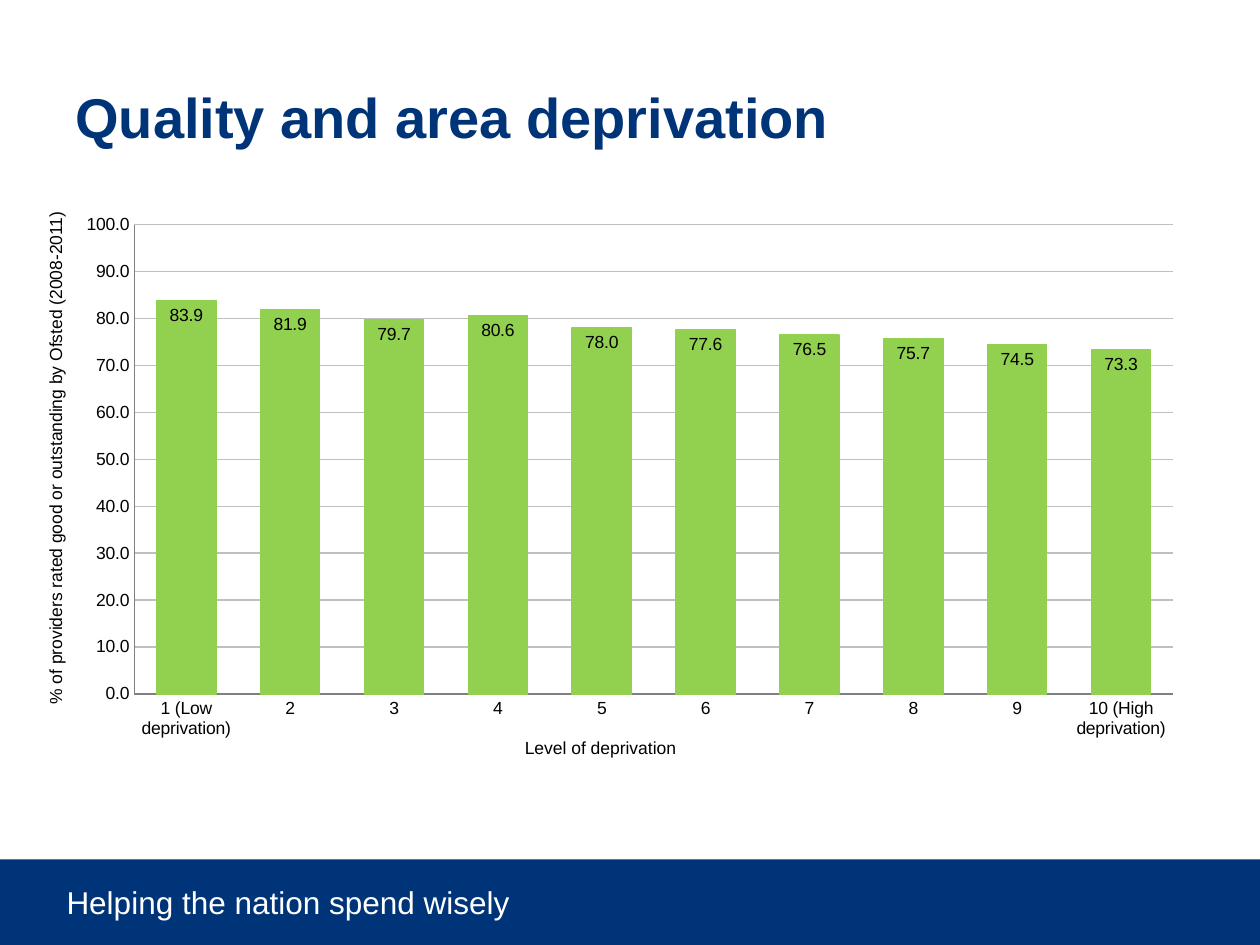
from dataclasses import dataclass

from lxml.etree import SubElement
from pptx import Presentation
from pptx.chart.data import CategoryChartData
from pptx.dml.color import RGBColor
from pptx.enum.chart import XL_CHART_TYPE, XL_LABEL_POSITION, XL_TICK_MARK
from pptx.enum.shapes import MSO_SHAPE
from pptx.enum.text import MSO_ANCHOR, PP_ALIGN
from pptx.oxml.ns import qn
from pptx.util import Inches, Pt


@dataclass(frozen=True)
class Theme:
    font: str = "Arial"
    navy: RGBColor = RGBColor(0x00, 0x34, 0x78)
    green: RGBColor = RGBColor(0x92, 0xD0, 0x50)
    grid: RGBColor = RGBColor(0xBF, 0xBF, 0xBF)
    axis: RGBColor = RGBColor(0x80, 0x80, 0x80)
    black: RGBColor = RGBColor(0, 0, 0)
    white: RGBColor = RGBColor(0xFF, 0xFF, 0xFF)
    title: Pt = Pt(32)
    foot: Pt = Pt(18)
    small: Pt = Pt(10)
    line: Pt = Pt(0.75)


THEME = Theme()
RATES = {
    "1 (Low deprivation)": 83.9, "2": 81.9, "3": 79.7, "4": 80.6, "5": 78.0,
    "6": 77.6, "7": 76.5, "8": 75.7, "9": 74.5, "10 (High deprivation)": 73.3,
}


def style(font, size, color, bold=False):
    font.name, font.size, font.bold = THEME.font, size, bold
    font.color.rgb = color


def add_text(slide, box, text, size, color, bold=False,
             align=PP_ALIGN.LEFT, anchor=MSO_ANCHOR.TOP):
    shape = slide.shapes.add_textbox(*map(Inches, box))
    frame = shape.text_frame
    frame.word_wrap = True
    frame.vertical_anchor = anchor
    para = frame.paragraphs[0]
    para.text = text
    para.alignment = align
    style(para.font, size, color, bold)
    return shape


def add_title(slide, box):
    add_text(slide, box, "Quality and area deprivation", THEME.title,
             THEME.navy, bold=True, anchor=MSO_ANCHOR.MIDDLE)


def add_footer(slide, box):
    left, top, width, height = box
    band = slide.shapes.add_shape(MSO_SHAPE.RECTANGLE, *map(Inches, box))
    band.shadow.inherit = False
    band.fill.solid()
    band.fill.fore_color.rgb = THEME.navy
    band.line.fill.background()
    add_text(slide, (left + 0.43, top + 0.14, 7.8, 0.4),
             "Helping the nation spend wisely", THEME.foot, THEME.white)


def set_plot(chart, **parts):
    """Fix the inner plot area as fractions of the chart."""
    area = chart.plots[0]._element.getparent()
    layout = area.find(qn("c:layout"))
    if layout is None:
        layout = SubElement(area, qn("c:layout"))
        area.insert(0, layout)
    manual = SubElement(layout, qn("c:manualLayout"))
    values = {"layoutTarget": "inner", "xMode": "edge", "yMode": "edge", **parts}
    for name, value in values.items():
        SubElement(manual, qn(f"c:{name}")).set("val", str(value))


def add_chart(slide, box):
    left, top, width, height = box
    data = CategoryChartData(number_format="0.0")
    data.categories = list(RATES)
    data.add_series("Series 1", list(RATES.values()))
    chart = slide.shapes.add_chart(
        XL_CHART_TYPE.COLUMN_CLUSTERED, *map(Inches, box), data).chart
    style(chart.font, THEME.small, THEME.black)
    chart.has_legend = chart.has_title = False
    set_plot(chart, x=0.062, y=0.038, w=0.918, h=0.86)

    # Axes and grid
    for axis in (chart.category_axis, chart.value_axis):
        axis.major_tick_mark = axis.minor_tick_mark = XL_TICK_MARK.NONE
        axis.format.line.color.rgb = THEME.axis
        axis.format.line.width = THEME.line
        style(axis.tick_labels.font, THEME.small, THEME.black)
    scale = chart.value_axis
    scale.minimum_scale, scale.maximum_scale, scale.major_unit = 0, 100, 10
    scale.tick_labels.number_format = "0.0"
    scale.tick_labels.number_format_is_linked = False
    scale.major_gridlines.format.line.color.rgb = THEME.grid
    scale.major_gridlines.format.line.width = THEME.line

    # Bars and their values
    plot = chart.plots[0]
    plot.gap_width, plot.overlap, plot.vary_by_categories = 75, 40, False
    bars = plot.series[0]
    bars.format.fill.solid()
    bars.format.fill.fore_color.rgb = THEME.green
    bars.format.line.color.rgb = THEME.green
    bars.format.line.width = THEME.line
    labels = bars.data_labels
    labels.show_value = True
    labels.position = XL_LABEL_POSITION.INSIDE_END
    labels.number_format = "0.0"
    labels.number_format_is_linked = False
    style(labels.font, THEME.small, THEME.black)

    # Axis captions
    add_text(slide, (left + 2.84, top + 4.18, 2.83, 0.27),
             "Level of deprivation", THEME.small, THEME.black,
             align=PP_ALIGN.CENTER)
    side = add_text(
        slide, (left - 3.81, top + 1.88, 7.48, 0.27),
        "% of providers rated good or outstanding by Ofsted (2008-2011)",
        THEME.small, THEME.black, align=PP_ALIGN.CENTER)
    side.rotation = 270


def main():
    deck = Presentation()
    deck.slide_width, deck.slide_height = Inches(10), Inches(7.5)
    slide = deck.slides.add_slide(deck.slide_layouts[6])
    add_footer(slide, (0, 6.82, 10, 0.71))
    add_title(slide, (0.5, 0.3, 8.99, 1.25))
    add_chart(slide, (0.51, 1.62, 8.98, 4.33))
    deck.save("out.pptx")


if __name__ == "__main__":
    main()
